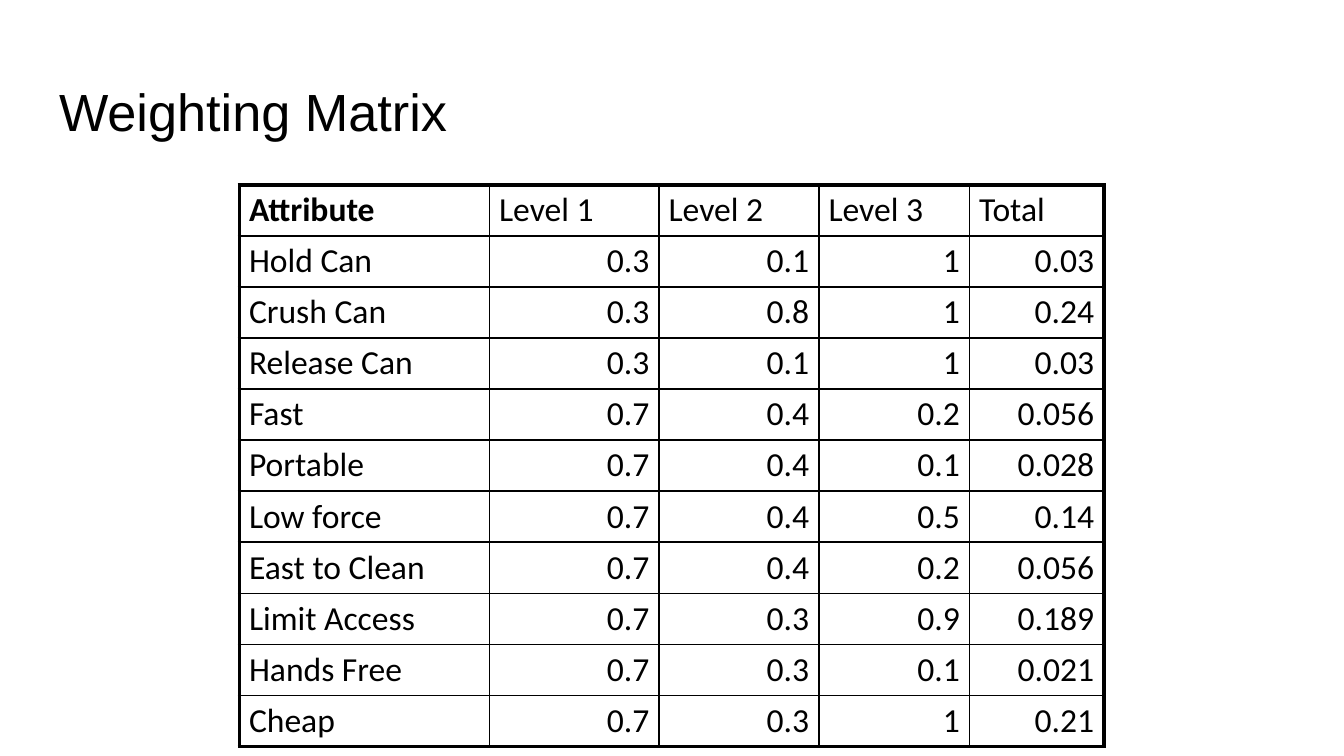
from lxml import etree
from pptx import Presentation
from pptx.dml.color import RGBColor
from pptx.enum import text
from pptx.oxml import ns
from pptx.util import Pt

BLACK = RGBColor(0, 0, 0)
THIN, THICK = Pt(1), Pt(2.25)
COLUMN_WIDTHS = [134, 90.8, 85.7, 80.7, 72]
ROW_HEIGHT = 27.36
WEIGHTS = [
    ("Attribute", "Level 1", "Level 2", "Level 3", "Total"),
    ("Hold Can", "0.3", "0.1", "1", "0.03"),
    ("Crush Can", "0.3", "0.8", "1", "0.24"),
    ("Release Can", "0.3", "0.1", "1", "0.03"),
    ("Fast", "0.7", "0.4", "0.2", "0.056"),
    ("Portable", "0.7", "0.4", "0.1", "0.028"),
    ("Low force", "0.7", "0.4", "0.5", "0.14"),
    ("East to Clean", "0.7", "0.4", "0.2", "0.056"),
    ("Limit Access", "0.7", "0.3", "0.9", "0.189"),
    ("Hands Free", "0.7", "0.3", "0.1", "0.021"),
    ("Cheap", "0.7", "0.3", "1", "0.21"),
]


def format_paragraph(p, font, size, align, bold=False):
    p.alignment = align
    for r in p.runs:
        r.font.name = font
        r.font.size = Pt(size)
        r.font.bold = bold
        r.font.color.rgb = BLACK


def set_borders(cell, widths):
    """Draw black cell borders; widths maps L, R, T and B, in that order."""
    tc_pr = cell._tc.get_or_add_tcPr()
    for i, (side, width) in enumerate(widths.items()):
        ln = etree.Element(ns.qn(f"a:ln{side}"), w=str(width))
        fill = etree.SubElement(ln, ns.qn("a:solidFill"))
        etree.SubElement(fill, ns.qn("a:srgbClr"), val=str(BLACK))
        tc_pr.insert(i, ln)


def add_title(s, left, top, width, height):
    title = s.shapes.title
    title.left, title.top = Pt(left), Pt(top)
    title.width, title.height = Pt(width), Pt(height)
    tf = title.text_frame
    tf.text = "Weighting Matrix"
    tf.word_wrap = True
    tf.auto_size = text.MSO_AUTO_SIZE.NONE
    tf.vertical_anchor = text.MSO_ANCHOR.TOP
    tf.margin_left = tf.margin_right = tf.margin_top = tf.margin_bottom = Pt(7.2)
    format_paragraph(tf.paragraphs[0], "Arial", 28, text.PP_ALIGN.LEFT)


def add_weight_table(s, left, top):
    n_rows, n_cols = len(WEIGHTS), len(COLUMN_WIDTHS)
    table = s.shapes.add_table(n_rows, n_cols, Pt(left), Pt(top),
                               Pt(sum(COLUMN_WIDTHS)), Pt(ROW_HEIGHT * n_rows)).table
    table.first_row = table.horz_banding = False
    for column, width in zip(table.columns, COLUMN_WIDTHS):
        column.width = Pt(width)
    for i, values in enumerate(WEIGHTS):
        table.rows[i].height = Pt(ROW_HEIGHT)
        for j, value in enumerate(values):
            cell = table.cell(i, j)
            cell.text = value
            cell.fill.background()
            cell.margin_left = cell.margin_right = Pt(5.2)
            cell.margin_top = cell.margin_bottom = Pt(2.6)
            is_number = i > 0 and j > 0
            align = text.PP_ALIGN.RIGHT if is_number else text.PP_ALIGN.LEFT
            format_paragraph(cell.text_frame.paragraphs[0], "Calibri", 18, align,
                             bold=i == j == 0)
            set_borders(cell, {
                "L": THICK if j == 0 else THIN,
                "R": THICK if j == n_cols - 1 else THIN,
                "T": THICK if i == 0 else THIN,
                "B": THICK if i == n_rows - 1 else THIN,
            })


def main():
    prs = Presentation()
    prs.slide_width, prs.slide_height = Pt(720), Pt(405)
    s = prs.slides.add_slide(prs.slide_layouts[5])
    add_title(s, 24.5, 35, 671, 45)
    add_weight_table(s, 128.2, 99)
    prs.save("out.pptx")


if __name__ == "__main__":
    main()
